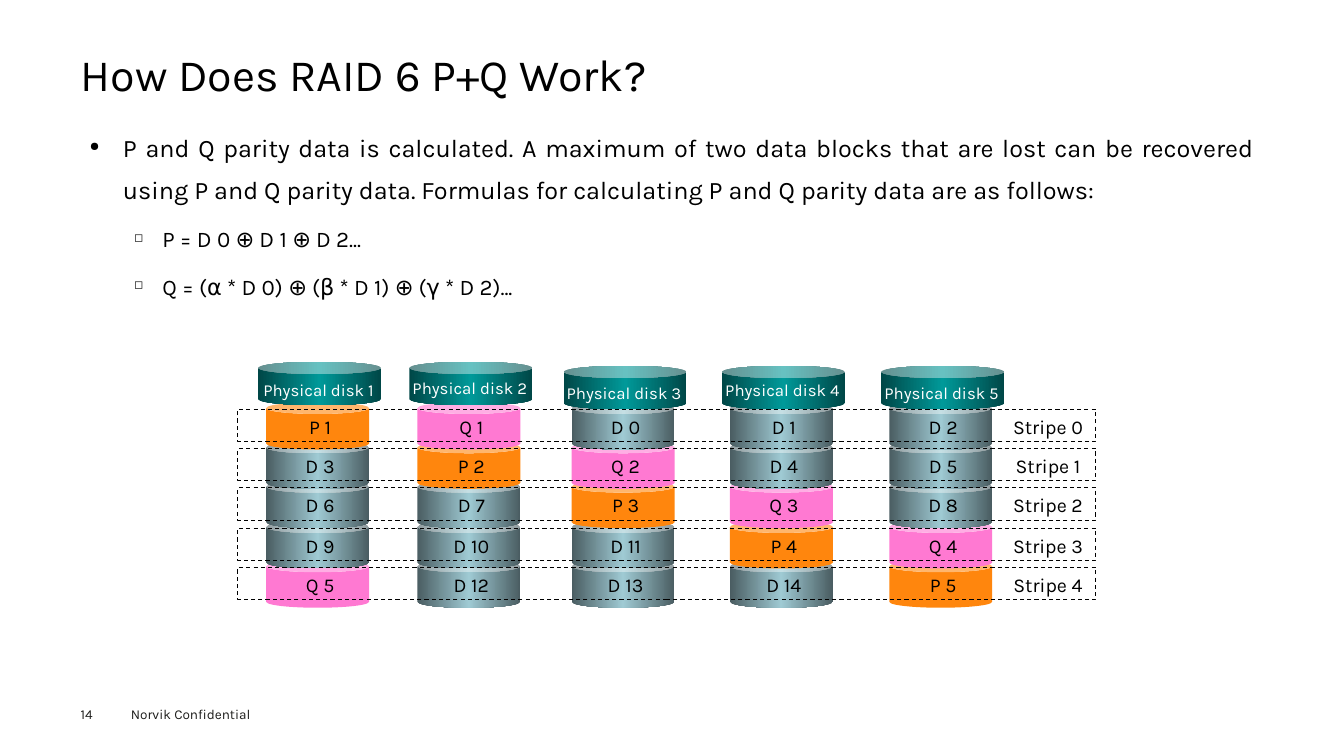
from copy import deepcopy

from lxml import etree
from pptx import Presentation
from pptx.dml.color import RGBColor
from pptx.enum.dml import MSO_LINE
from pptx.enum.shapes import MSO_SHAPE
from pptx.enum.text import MSO_ANCHOR, PP_ALIGN
from pptx.oxml.ns import qn
from pptx.util import Pt

SCALE = 9144
FONT = "Karla"
CAN, RECTANGLE = MSO_SHAPE.CAN, MSO_SHAPE.RECTANGLE
DASH = MSO_LINE.DASH
TOP, MIDDLE = MSO_ANCHOR.TOP, MSO_ANCHOR.MIDDLE
LEFT, CENTER, JUSTIFY = PP_ALIGN.LEFT, PP_ALIGN.CENTER, PP_ALIGN.JUSTIFY

COLORS = {
    "text": "000000",
    "footer": "1D1D1B",
    "white": "FFFFFF",
    "P": "FF860D",
    "Q": "FF79D2",
    "data_edge": "4A5D62",
    "data_middle": "9FCAD3",
    "cap_edge": "004747",
    "cap_middle": "009999",
}

BODY = [
    ("P and Q parity data is calculated. A maximum of two data blocks that are lost can be "
     "recovered using P and Q parity data. Formulas for calculating P and Q parity data are "
     "as follows:", 0),
    ("P = D 0 ⊕ D 1 ⊕ D 2...", 1),
    ("Q = (α * D 0) ⊕ (β * D 1) ⊕ (γ * D 2)...", 1),
]
LEVELS = [
    {"size": 18, "margin": 33, "hanging": 33, "before": 0, "bullet": "●", "align": JUSTIFY},
    {"size": 16, "margin": 72, "hanging": 28, "before": 7.2, "bullet": "◻", "align": LEFT},
]

DISKS = [
    (28, 0, 13, ["P 1", "D 3", "D 6", "D 9", "Q 5"]),
    (178, 0, 11, ["Q 1", "P 2", "D 7", "D 10", "D 12"]),
    (331, 4, 16, ["D 0", "Q 2", "P 3", "D 11", "D 13"]),
    (488, 4, 13, ["D 1", "D 4", "Q 3", "P 4", "D 14"]),
    (646, 4, 16, ["D 2", "D 5", "D 8", "Q 4", "P 5"]),
]
ROWS = 5


def px(value):
    return value * SCALE


def color(name):
    return RGBColor.from_string(COLORS[name])


def row_offset(row):
    return row * 197 // 5


def add_span(para, text, size, color_name):
    span = para.add_run()
    span.text = text
    span.font.name = FONT
    span.font.size = Pt(size)
    span.font.color.rgb = color(color_name)


def add_box(page, box, insets, anchor=TOP, wrap=True):
    frame = page.shapes.add_textbox(*map(px, box)).text_frame
    frame.word_wrap = wrap
    frame.vertical_anchor = anchor
    frame.margin_left = frame.margin_right = px(insets[0])
    frame.margin_top = frame.margin_bottom = px(insets[1])
    return frame


def add_label(page, box, text, size, color_name="text", align=CENTER, insets=(10, 5)):
    para = add_box(page, box, insets, MIDDLE, False).paragraphs[0]
    para.alignment = align
    add_span(para, text, size, color_name)


def add_title(page, box):
    para = add_box(page, box, (0, 0), MIDDLE).paragraphs[0]
    para.line_spacing = 0.9
    add_span(para, "How Does RAID 6 P+Q Work?", 32, "text")


def add_body(page, box):
    frame = add_box(page, box, (9, 4))
    for index, (text, depth) in enumerate(BODY):
        level = LEVELS[depth]
        para = frame.add_paragraph() if index else frame.paragraphs[0]
        para.level = depth
        para.alignment = level["align"]
        para.line_spacing = 1.4
        para.space_before = Pt(level["before"])
        properties = para._p.get_or_add_pPr()
        properties.set("marL", str(px(level["margin"])))
        properties.set("indent", str(-px(level["hanging"])))
        etree.SubElement(properties, qn("a:buSzPct"), val="50000")
        etree.SubElement(properties, qn("a:buChar"), char=level["bullet"])
        add_span(para, text, level["size"], "text")


def fill_gradient(shape, edge, middle):
    shape.fill.gradient()
    shape.fill.gradient_angle = 0
    stop_list = shape.element.spPr.find(qn("a:gradFill")).find(qn("a:gsLst"))
    stop_list.append(deepcopy(stop_list[0]))
    stops = zip(shape.fill.gradient_stops, (0, 0.5, 1), (edge, middle, edge))
    for stop, position, name in stops:
        stop.position = position
        stop.color.rgb = color(name)


def add_can(page, box, curve, kind):
    can = page.shapes.add_shape(CAN, *map(px, box))
    can.shadow.inherit = False
    can.adjustments[0] = curve
    can.line.fill.background()
    if kind in COLORS:
        can.fill.solid()
        can.fill.fore_color.rgb = color(kind)
    else:
        fill_gradient(can, kind + "_edge", kind + "_middle")


def add_disk(page, left, top, number, cap_drop, label_drop, blocks):
    for row in reversed(range(ROWS)):
        kind = {"P": "P", "Q": "Q"}.get(blocks[row][0], "data")
        add_can(page, (left, top + 40 + row_offset(row), 102, 47), 0.25, kind)
    for row, block in enumerate(blocks):
        add_label(page, (left + 16, top + 47 + row_offset(row), 75, 34), block, 14)
    add_can(page, (left - 8, top + cap_drop, 122, 43), 0.28, "cap")
    label_box = (left - 20, top + label_drop, 144, 30)
    add_label(page, label_box, f"Physical disk {number}", 12, "white")


def add_stripe(page, box, number):
    left, top, width, height = box
    add_label(page, (left + width - 95, top, 95, 34), f"Stripe {number}", 14)
    frame = page.shapes.add_shape(RECTANGLE, *map(px, box))
    frame.shadow.inherit = False
    frame.fill.background()
    frame.line.color.rgb = color("text")
    frame.line.width = Pt(0.75)
    frame.line.dash_style = DASH


def add_array(page, box):
    left, top, width, height = box
    for number, (offset, cap_drop, label_drop, blocks) in enumerate(DISKS, 1):
        add_disk(page, left + offset, top, number, cap_drop, label_drop, blocks)
    for row in range(ROWS):
        add_stripe(page, (left, top + 47 + row_offset(row), width, 32), row)


def add_footer(page, box):
    left, top, width, height = box
    add_label(page, (left + 40, top, width - 40, height), "Norvik Confidential", 9.7,
              "footer", LEFT)
    add_label(page, (left, top + 5, 55, 16), "14", 9.7, "footer", LEFT, (0, 0))


def main():
    deck = Presentation()
    deck.slide_width = px(1333)
    deck.slide_height = px(750)
    page = deck.slides.add_slide(deck.slide_layouts[6])
    add_footer(page, (80, 695, 200, 27))
    add_title(page, (80, 49, 1173, 54))
    add_body(page, (80, 115, 1173, 533))
    add_array(page, (236, 359, 851, 244))
    deck.save("out.pptx")


if __name__ == "__main__":
    main()
